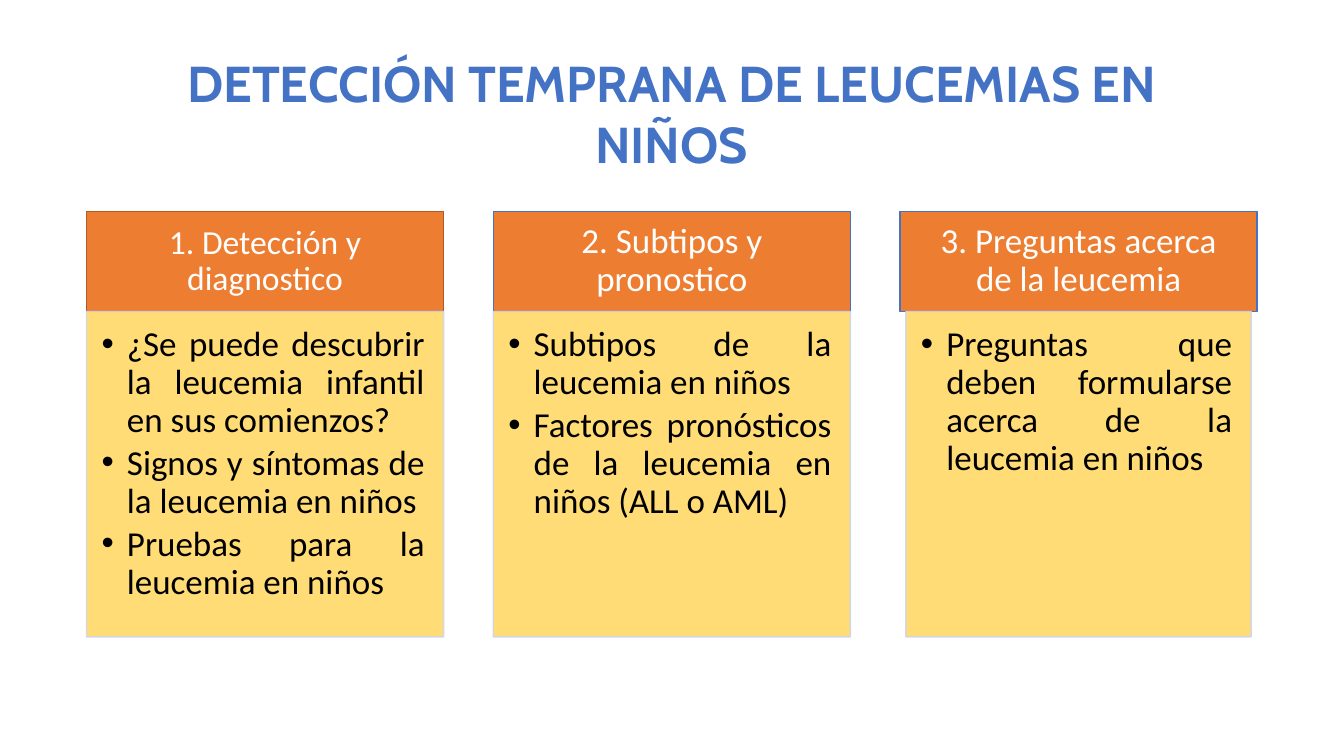
from lxml import etree
from pptx import Presentation
from pptx import util as u
from pptx.dml.color import RGBColor
from pptx.enum import shapes, text
from pptx.oxml import ns

BLUE, ORANGE, RUST = "4472C4", "ED7D31", "AF5C24"
YELLOW, PALE, WHITE, BLACK = "FFD966", "CFD5EA", "FFFFFF", "000000"

# Heading, heading size, heading border, body inset, questions
COLUMNS = [
    ("1. Detección y diagnostico", 24, RUST, 0, [
        "¿Se puede descubrir la leucemia infantil en sus comienzos?",
        "Signos y síntomas de la leucemia en niños",
        "Pruebas para la leucemia en niños"]),
    ("2. Subtipos y pronostico", 25, BLUE, 0, [
        "Subtipos de la leucemia en niños",
        "Factores pronósticos de la leucemia en niños (ALL o AML)"]),
    ("3. Preguntas acerca de la leucemia", 25, BLUE, 0.15, [
        "Preguntas que deben formularse acerca de la leucemia en niños"]),
]
LEFT, PITCH, WIDTH = 2.18, 10.25, 9
HEAD_TOP, HEAD_HEIGHT, BODY_HEIGHT = 5.33, 2.52, 8.2


def rgb(color):
    return RGBColor.from_string(color)


class Deck:
    """Style and current slide."""
    title_font, font = "Cabin", "Calibri"

    def __init__(self, prs):
        self.s = prs.slides.add_slide(prs.slide_layouts[4])

    def place(self, sp, left, top, width, height):
        sp.left, sp.top = u.Cm(left), u.Cm(top)
        sp.width, sp.height = u.Cm(width), u.Cm(height)

    def paint(self, sp, fill, line, alpha=100):
        sp.fill.solid()
        sp.fill.fore_color.rgb = rgb(fill)
        sp.line.color.rgb = rgb(line)
        sp.line.width = u.Pt(1)
        if alpha < 100:
            for clr in sp.element.spPr.iter(ns.qn("a:srgbClr")):
                etree.SubElement(clr, ns.qn("a:alpha"), val=str(alpha * 1000))

    def frame(self, sp, anchor, *margins):
        tf = sp.text_frame
        tf.word_wrap = True
        tf.auto_size = text.MSO_AUTO_SIZE.NONE
        tf.vertical_anchor = anchor
        (tf.margin_left, tf.margin_top,
         tf.margin_right, tf.margin_bottom) = map(u.Cm, margins)
        return tf

    def style(self, p, font, size, color, align, spacing=0.9, after=0, bold=False):
        p.alignment = align
        p.line_spacing = spacing
        p.space_before, p.space_after = u.Pt(0), u.Pt(after)
        for r in p.runs:
            r.font.name, r.font.size, r.font.bold = font, u.Pt(size), bold
            r.font.color.rgb = rgb(color)

    def title(self, words):
        sp = self.s.shapes.title
        self.place(sp, 3.12, 1.19, 27.61, 3.3)
        tf = self.frame(sp, text.MSO_ANCHOR.TOP, 0.25, 0.13, 0.25, 0.13)
        tf.text = words
        self.style(tf.paragraphs[0], self.title_font, 36, BLUE,
                   text.PP_ALIGN.CENTER, spacing=1.0, bold=True)

    def heading(self, words, size, border, left):
        sp = self.s.shapes.add_shape(shapes.MSO_SHAPE.RECTANGLE, 0, 0, 0, 0)
        sp.shadow.inherit = False
        self.place(sp, left, HEAD_TOP, WIDTH, HEAD_HEIGHT)
        self.paint(sp, ORANGE, border)
        tf = self.frame(sp, text.MSO_ANCHOR.MIDDLE, 0.48, 0.28, 0.48, 0.28)
        tf.text = words
        self.style(tf.paragraphs[0], self.font, size, WHITE, text.PP_ALIGN.CENTER)

    def body(self, sp, questions, left, width):
        self.place(sp, left, HEAD_TOP + HEAD_HEIGHT, width, BODY_HEIGHT)
        self.paint(sp, YELLOW, PALE, alpha=90)
        sp.element.getparent().append(sp.element)  # in front of its heading
        tf = self.frame(sp, text.MSO_ANCHOR.TOP, 0.38, 0.38, 0.48, 0.56)
        tf.text = "\n".join(questions)
        for p in tf.paragraphs:
            self.bullet(p)
            self.style(p, self.font, 25, BLACK, text.PP_ALIGN.JUSTIFY, after=3.75)

    def bullet(self, p):
        pPr = p._p.get_or_add_pPr()
        pPr.set("marL", str(u.Cm(0.64)))
        pPr.set("indent", str(-u.Cm(0.64)))
        etree.SubElement(pPr, ns.qn("a:buFont"), typeface="Arial")
        etree.SubElement(pPr, ns.qn("a:buChar"), char="•")


def main():
    prs = Presentation()
    prs.slide_width, prs.slide_height = u.Cm(33.87), u.Cm(19.05)
    deck = Deck(prs)

    # Title
    deck.title("DETECCIÓN TEMPRANA DE LEUCEMIAS EN NIÑOS")

    # Three columns: heading above a list
    *bodies, spare = [sp for sp in deck.s.placeholders
                      if 1 <= sp.placeholder_format.idx <= 4]
    for i, (words, size, border, inset, questions) in enumerate(COLUMNS):
        left = LEFT + i * PITCH
        deck.heading(words, size, border, left)
        deck.body(bodies[i], questions, left + inset, WIDTH - 2 * inset)

    # Unused placeholder
    spare.element.getparent().remove(spare.element)

    prs.save("out.pptx")


if __name__ == "__main__":
    main()
